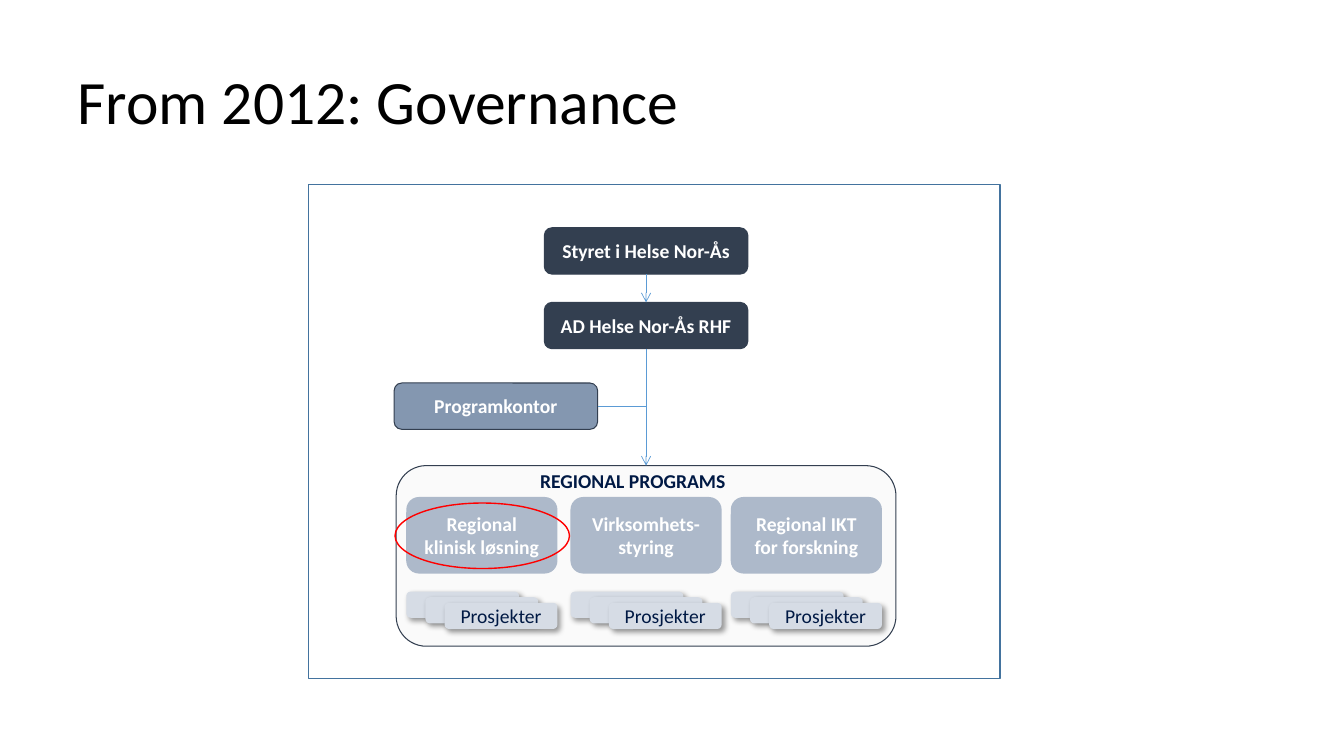
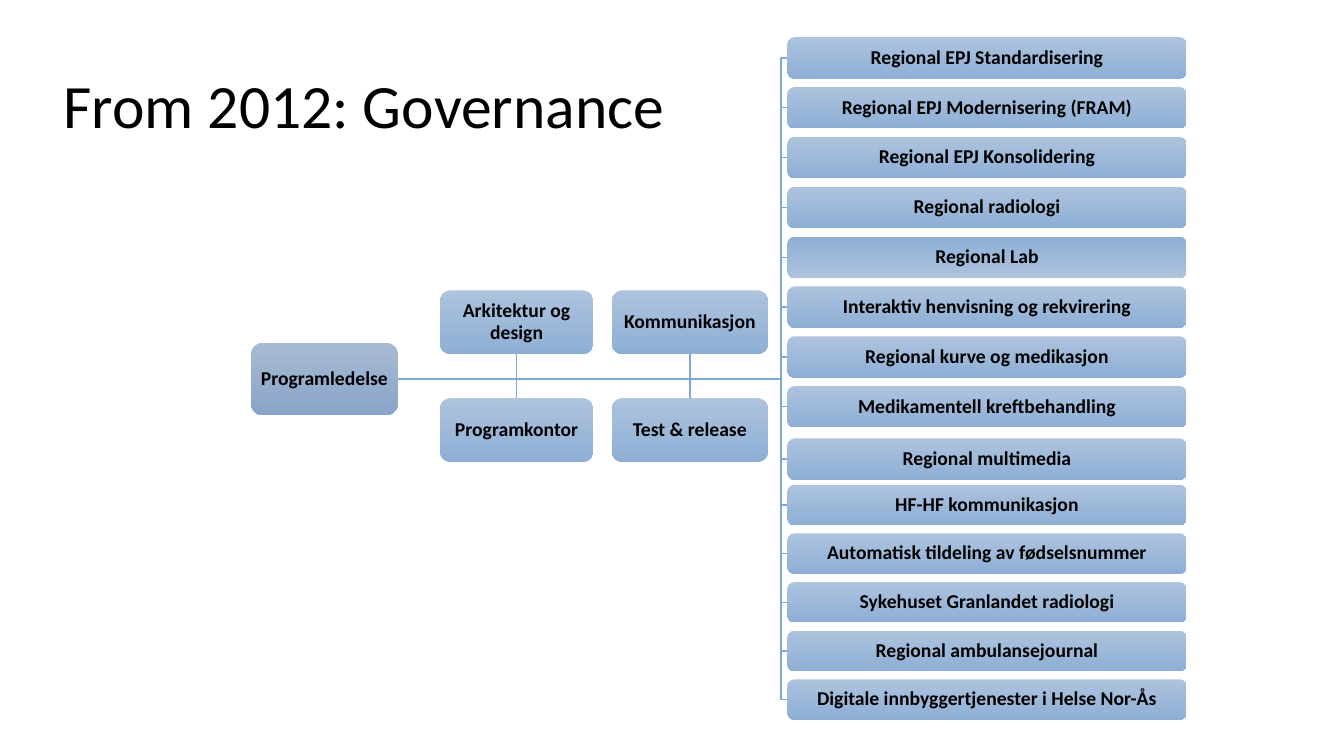
from dataclasses import dataclass

from lxml.etree import SubElement
from pptx import Presentation
from pptx.dml.color import RGBColor
from pptx.enum.shapes import MSO_CONNECTOR, MSO_SHAPE
from pptx.enum.text import MSO_ANCHOR, MSO_AUTO_SIZE, PP_ALIGN
from pptx.oxml.ns import qn
from pptx.util import Pt


@dataclass(frozen=True)
class Theme:
    font: str = "Calibri"
    title_size: int = 44
    text_size: int = 14
    black: str = "000000"
    white: str = "FFFFFF"
    navy: str = "001944"
    board: str = "333F50"
    office: str = "8497B0"
    program: str = "ADB9CA"
    project: str = "D6DCE5"
    panel: str = "FAFAFA"
    arrow: str = "5B9BD5"
    frame: str = "43739E"
    highlight: str = "FF0000"
    branch: str = "7AA9DA"
    leader_gradient: tuple = ("A8BBD3", "88A4C8")
    unit_gradient: tuple = ("ADC3DE", "8EAFD5")


THEME = Theme()

TITLE = "From 2012: Governance"
PROGRAMS = [
    (290.2, "Regional\nklinisk løsning"),
    (407.5, "Virksomhets-styring"),
    (522, "Regional IKT for forskning"),
]
STAFF_COLUMNS = [
    (314.3, 109.5, "Arkitektur og design", "Programkontor"),
    (437, 111.6, "Kommunikasjon", "Test & release"),
]
UPPER_PROJECTS = [
    "Regional EPJ Standardisering",
    "Regional EPJ Modernisering (FRAM)",
    "Regional EPJ Konsolidering",
    "Regional radiologi",
    "Regional Lab",
    "Interaktiv henvisning og rekvirering",
    "Regional kurve og medikasjon",
    "Medikamentell kreftbehandling",
]
MIDDLE_PROJECTS = ["Regional multimedia"]
LOWER_PROJECTS = [
    "HF-HF kommunikasjon",
    "Automatisk tildeling av fødselsnummer",
    "Sykehuset Granlandet radiologi",
    "Regional ambulansejournal",
    "Digitale innbyggertjenester i Helse Nor-Ås",
]
# First top, pitch, height and names of each run of project boxes
PROJECT_RUNS = [
    (26.6, 35.6, 29.5, UPPER_PROJECTS),
    (313.2, 0, 29.5, MIDDLE_PROJECTS),
    (346.3, 34.75, 28.8, LOWER_PROJECTS),
]
REVERSED_PROJECT = "Regional Lab"


def rgb(value):
    return RGBColor.from_string(value)


def points(*values):
    return [Pt(value) for value in values]


def style_line(line, color, width):
    line.color.rgb = rgb(color)
    line.width = Pt(width)


def style_paragraph(para, color, size=THEME.text_size, bold=False,
                    align=PP_ALIGN.CENTER, spacing=None):
    para.alignment = align
    para.line_spacing = spacing
    para.font.name = THEME.font
    para.font.size = Pt(size)
    para.font.bold = bold
    para.font.color.rgb = rgb(color)


def write(shape, text, color, bold=True, spacing=None):
    frame = shape.text_frame
    frame.text = text
    frame.word_wrap = True
    frame.vertical_anchor = MSO_ANCHOR.MIDDLE
    for para in frame.paragraphs:
        style_paragraph(para, color, bold=bold, spacing=spacing)


def add_titled_page(deck, *area):
    page = deck.slides.add_slide(deck.slide_layouts.get_by_name("Title Only"))
    title = page.shapes.title
    title.left, title.top, title.width, title.height = points(*area)
    write(title, TITLE, THEME.black)
    title.text_frame.auto_size = MSO_AUTO_SIZE.NONE
    style_paragraph(title.text_frame.paragraphs[0], THEME.black,
                    THEME.title_size, align=PP_ALIGN.LEFT, spacing=0.9)
    return page


def add_box(shapes, area, fill=None, line=None, width=0.75,
            kind=MSO_SHAPE.ROUNDED_RECTANGLE):
    box = shapes.add_shape(kind, *points(*area))
    box.shadow.inherit = False
    if fill:
        box.fill.solid()
        box.fill.fore_color.rgb = rgb(fill)
    else:
        box.fill.background()
    if line:
        style_line(box.line, line, width)
    else:
        box.line.fill.background()
    return box


def add_link(page, source, target, arrow=True):
    """Join two ends, each a (box, side) pair or an (x, y) point."""
    link = page.shapes.add_connector(MSO_CONNECTOR.STRAIGHT, 0, 0, 0, 0)
    if isinstance(source[0], (int, float)):
        link.begin_x, link.begin_y = points(*source)
    else:
        link.begin_connect(*source)
    link.end_connect(*target)
    style_line(link.line, THEME.arrow, 0.5)
    if arrow:
        SubElement(link.line._get_or_add_ln(), qn("a:tailEnd"), type="arrow")
    SubElement(link._element.spPr, qn("a:effectLst"))


def add_drop_shadow(shape):
    effects = shape._element.spPr.find(qn("a:effectLst"))
    shadow = SubElement(effects, qn("a:outerShdw"), blurRad=str(Pt(4)),
                        dist=str(Pt(3)), dir="2700000", algn="tl",
                        rotWithShape="0")
    color = SubElement(shadow, qn("a:srgbClr"), val=THEME.black)
    SubElement(color, qn("a:alpha"), val="40000")


def add_project_stack(page, left, top):
    stack = page.shapes.add_group_shape()
    for layer in range(3):
        area = (left + 13.7 * layer, top + 4 * layer, 80.6, 18.7)
        card = add_box(stack.shapes, area, THEME.project)
        add_drop_shadow(card)
    write(card, "Prosjekter", THEME.navy, bold=False)


def add_panel_heading(page, text):
    heading = page.shapes.add_textbox(*points(378.7, 331.2, 146.9, 23.8))
    heading.text_frame.text = text
    heading.text_frame.word_wrap = False
    style_paragraph(heading.text_frame.paragraphs[0], THEME.navy, bold=True,
                    align=PP_ALIGN.LEFT)


def add_gradient_box(page, area, text, colors):
    box = add_box(page.shapes, area)
    box.fill.gradient()
    box.fill.gradient_angle = 270
    for stop, color in zip(box.fill.gradient_stops, colors):
        stop.color.rgb = rgb(color)
    write(box, text, THEME.black, spacing=0.9)
    frame = box.text_frame
    frame.margin_left = frame.margin_right = Pt(3)
    frame.margin_top = frame.margin_bottom = Pt(3)


def add_branch(page, start, *corners):
    builder = page.shapes.build_freeform(*points(*start))
    builder.add_line_segments([points(*corner) for corner in corners],
                              close=False)
    branch = builder.convert_to_shape()
    branch.shadow.inherit = False
    branch.fill.background()
    style_line(branch.line, THEME.branch, 1)


def build_governance_page(deck):
    page = add_titled_page(deck, 48.2, 22.3, 828, 104.4)
    shapes = page.shapes
    panel = add_box(shapes, (283, 332.6, 357, 129), THEME.panel, THEME.board)
    add_panel_heading(page, "REGIONAL PROGRAMS")

    box_width, box_height = 145.4, 33.1
    bosses = []
    for left, top, text, fill in [
        (388.8, 162.7, "Styret i Helse Nor-Ås", THEME.board),
        (388.8, 216, "AD Helse Nor-Ås RHF", THEME.board),
        (281.5, 273.6, "Programkontor", THEME.office),
    ]:
        box = add_box(shapes, (left, top, box_width, box_height), fill,
                      THEME.board)
        write(box, text, THEME.white)
        bosses.append(box)
    board, director, office = bosses

    for left, text in PROGRAMS:
        program = add_box(shapes, (left, 355, 108, 54.7), THEME.program)
        write(program, text, THEME.white)
        add_project_stack(page, left, 422.6)

    add_box(shapes, (282.2, 359.3, 124.6, 46.8), line=THEME.highlight,
            width=1, kind=MSO_SHAPE.OVAL)
    add_link(page, (board, 2), (director, 0))
    add_link(page, (director, 2), (panel, 0))
    add_link(page, (461.5, 273.6 + box_height / 2), (office, 3), arrow=False)
    add_box(shapes, (220.3, 131.8, 493.9, 352.8), line=THEME.frame, width=1,
            kind=MSO_SHAPE.RECTANGLE)


def build_organisation_page(deck):
    page = add_titled_page(deck, 38.2, 39.6, 458.6, 75.6)
    hub_x, hub_y, spine_x = 284.3, 270.7, 557.8
    leader = (179.3, 244.8, 105, 51.8)
    units = [(leader, "Programledelse", THEME.leader_gradient)]

    staff_height, upper_top, lower_top = 45.4, 207.4, 284.4
    for left, width, upper, lower in STAFF_COLUMNS:
        middle = left + width / 2
        for top, edge, text in [(upper_top, upper_top + staff_height, upper),
                                (lower_top, lower_top, lower)]:
            add_branch(page, (hub_x, hub_y), (middle, hub_y), (middle, edge))
            units.append(((left, top, width, staff_height), text,
                          THEME.unit_gradient))

    project_left, project_width = 562.5, 285.1
    for first_top, pitch, height, names in PROJECT_RUNS:
        for row, name in enumerate(names):
            top = first_top + pitch * row
            middle = top + height / 2
            add_branch(page, (hub_x, hub_y), (spine_x, hub_y),
                       (spine_x, middle), (project_left, middle))
            colors = THEME.unit_gradient
            if name == REVERSED_PROJECT:
                colors = colors[::-1]
            units.append(((project_left, top, project_width, height), name,
                          colors))

    for area, text, colors in units:
        add_gradient_box(page, area, text, colors)


def main():
    deck = Presentation()
    deck.slide_width, deck.slide_height = points(960, 540)
    build_governance_page(deck)
    build_organisation_page(deck)
    deck.save("out.pptx")


if __name__ == "__main__":
    main()
